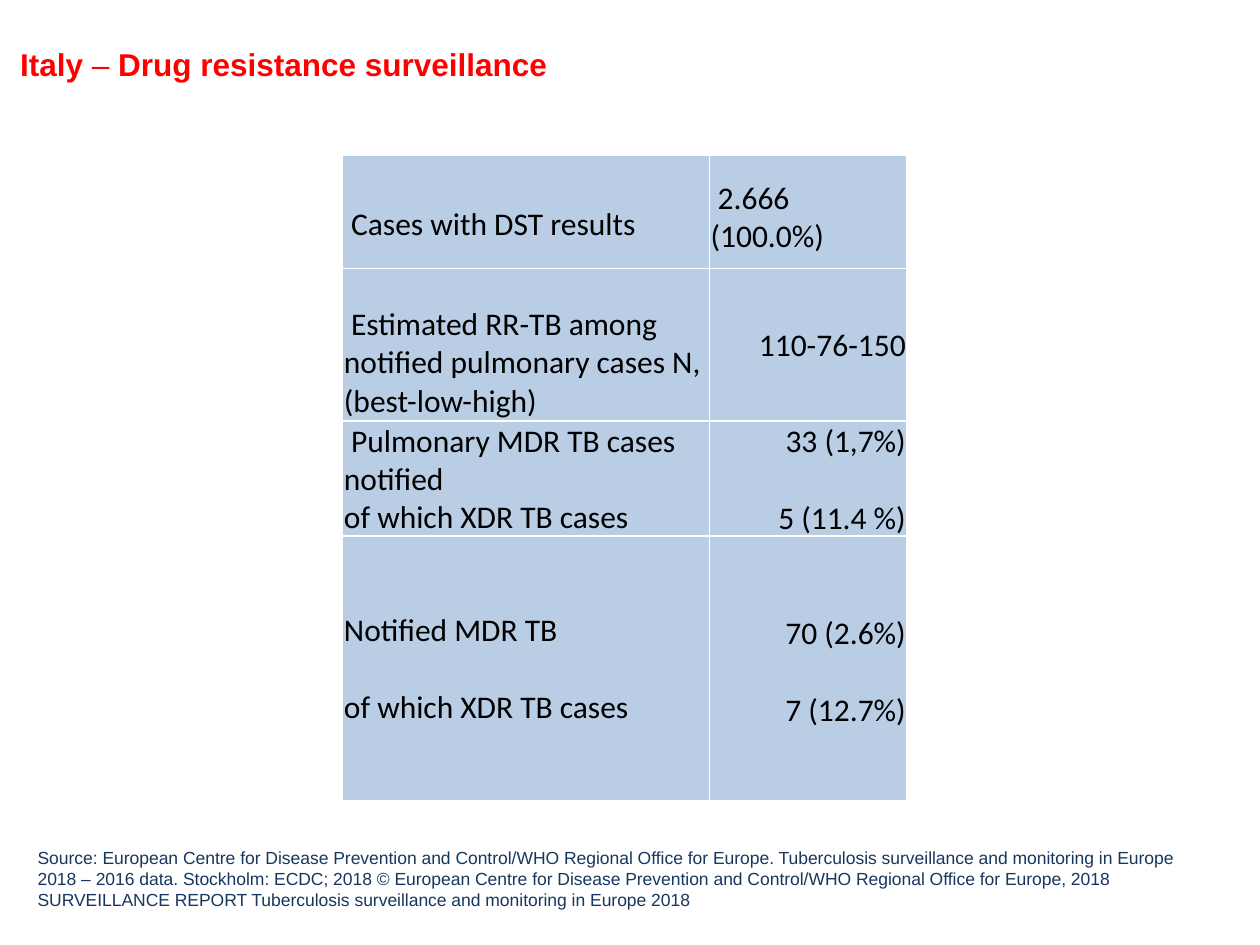
from lxml.etree import SubElement
from pptx import Presentation
from pptx.dml.color import RGBColor
from pptx.enum.text import MSO_ANCHOR as Anchor, PP_ALIGN as Align
from pptx.oxml.ns import qn
from pptx.util import Inches, Pt

RED, NAVY, BLACK, WHITE, PALE_BLUE = "FF0000", "17375E", "000000", "FFFFFF", "B9CDE5"

TITLE = [[("Italy", True), (" – ", False), ("Drug resistance surveillance", True)]]
SOURCE = [
    "Source: European Centre for Disease Prevention and Control/WHO Regional Office for Europe. "
    "Tuberculosis surveillance and monitoring in Europe 2018 – 2016 data. Stockholm: ECDC; 2018 "
    "© European Centre for Disease Prevention and Control/WHO Regional Office for Europe, 2018",
    "SURVEILLANCE REPORT Tuberculosis surveillance and monitoring in Europe 2018",
]

COLUMN_WIDTHS = [2.91, 1.57]
LINE = 22  # height of one 18 pt table line, in points
# Row height, then two cells: paragraphs and their format
ROWS = [
    (0.9, ([" Cases with DST results"], dict(top=0.21)),
          ([" 2.666 (100.0%)"], dict(top=0.1))),
    (1.21, ([" Estimated RR-TB among notified pulmonary cases N,", "(best-low-high)"],
            dict(anchor=Anchor.BOTTOM)),
           (["110-76-150"], dict(align=Align.RIGHT))),
    (0.91, ([" Pulmonary MDR TB cases notified", "of which XDR TB cases"], {}),
           (["33 (1,7%)", " 5 (11.4 %)"], dict(align=Align.RIGHT, gap=LINE))),
    (2.1, (["Notified MDR TB", "of which XDR TB cases"], dict(gap=LINE)),
          (["70 (2.6%)", "7 (12.7%)"], dict(align=Align.RIGHT, gap=LINE, top=0.06))),
]


def rgb(color):
    return RGBColor.from_string(color)


def write(frame, paragraphs, font="Arial", size=18, color=BLACK, align=Align.LEFT, gap=0):
    """Fill a frame; a paragraph is a string or a list of (text, bold) runs."""
    frame.word_wrap = True
    for index, content in enumerate(paragraphs):
        paragraph = frame.add_paragraph() if index else frame.paragraphs[0]
        paragraph.alignment = align
        if index and gap:
            paragraph.space_before = Pt(gap)
        runs = [(content, False)] if isinstance(content, str) else content
        for text, bold in runs:
            run = paragraph.add_run()
            run.text = text
            run.font.name, run.font.size, run.font.bold = font, Pt(size), bold
            run.font.color.rgb = rgb(color)


def add_text(slide, box, paragraphs, anchor=Anchor.TOP, left=0.1, **text_format):
    frame = slide.shapes.add_textbox(*map(Inches, box)).text_frame
    frame.vertical_anchor = anchor
    frame.margin_left = Inches(left)
    write(frame, paragraphs, **text_format)


def add_borders(cell, color=WHITE, width=1):
    properties = cell._tc.get_or_add_tcPr()
    for position, side in enumerate(("a:lnL", "a:lnR", "a:lnT", "a:lnB")):
        line = SubElement(properties, qn(side), w=str(Pt(width)))
        SubElement(SubElement(line, qn("a:solidFill")), qn("a:srgbClr"), val=color)
        properties.insert(position, line)


def fill_cell(cell, paragraphs, top=0.01, anchor=Anchor.MIDDLE, **text_format):
    cell.margin_left = cell.margin_right = Inches(0.01)
    cell.margin_top, cell.margin_bottom = Inches(top), 0
    cell.vertical_anchor = anchor
    cell.fill.solid()
    cell.fill.fore_color.rgb = rgb(PALE_BLUE)
    add_borders(cell)
    write(cell.text_frame, paragraphs, font="Calibri", **text_format)


def add_results_table(slide, left, top):
    size = sum(COLUMN_WIDTHS), sum(row[0] for row in ROWS)
    table = slide.shapes.add_table(len(ROWS), len(COLUMN_WIDTHS),
                                   *map(Inches, (left, top, *size))).table
    table.first_row = table.horz_banding = False
    for column, width in zip(table.columns, COLUMN_WIDTHS):
        column.width = Inches(width)
    for row, (height, *cells) in zip(table.rows, ROWS):
        row.height = Inches(height)
        for cell, (paragraphs, cell_format) in zip(row.cells, cells):
            fill_cell(cell, paragraphs, **cell_format)


def main():
    presentation = Presentation()
    presentation.slide_width, presentation.slide_height = Inches(10), Inches(7.5)
    slide = presentation.slides.add_slide(presentation.slide_layouts[6])
    add_text(slide, (-0.01, 0, 9.74, 0.71), TITLE, color=RED, anchor=Anchor.BOTTOM, left=0.17)
    add_results_table(slide, 2.72, 1.23)
    add_text(slide, (0.2, 6.67, 9.52, 0.61), SOURCE, size=10, color=NAVY)
    presentation.save("out.pptx")


if __name__ == "__main__":
    main()
